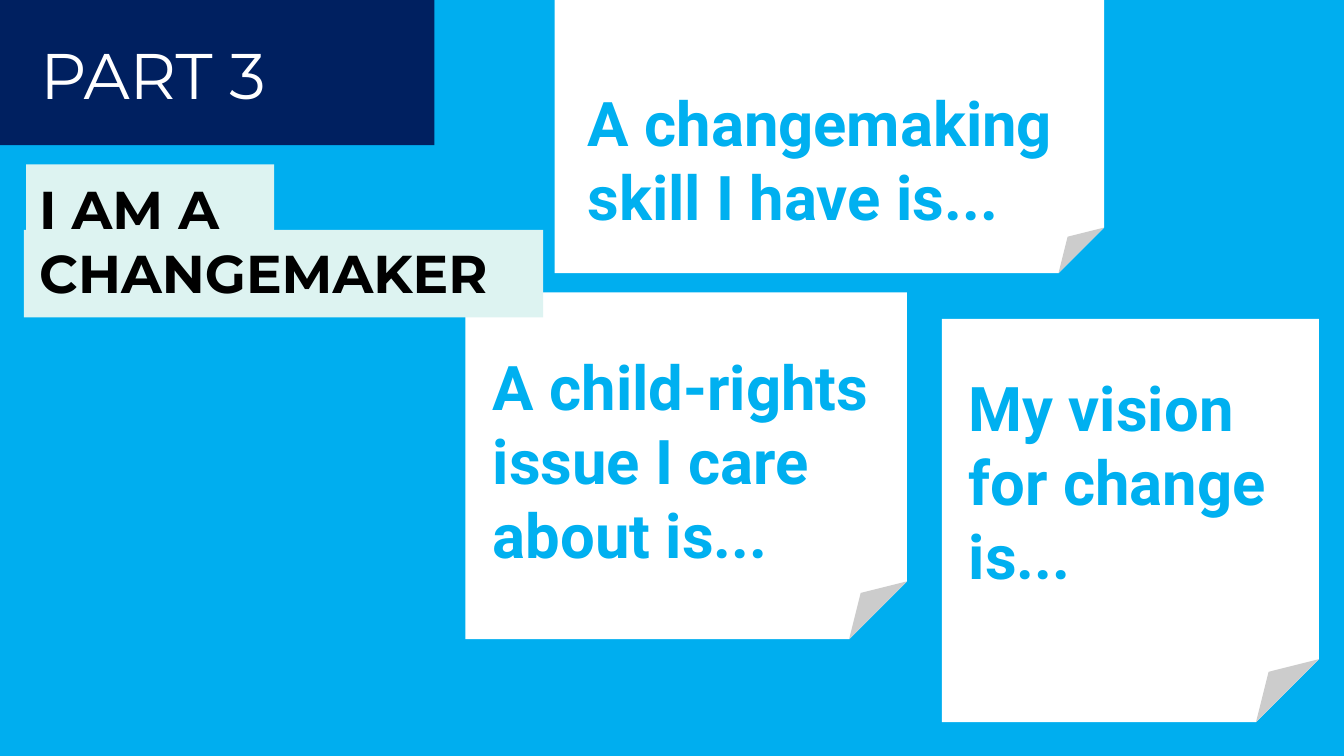
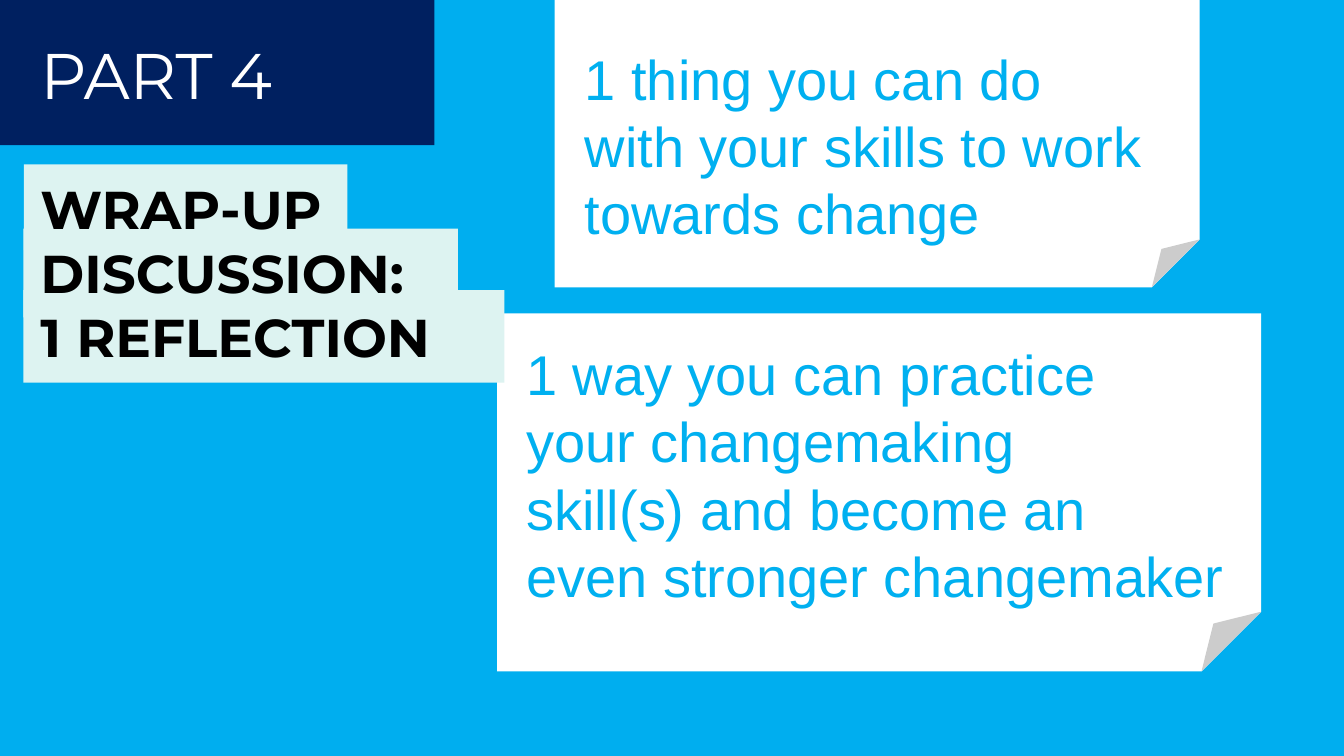
from pptx import Presentation
from pptx import util as u
from pptx.dml.color import RGBColor
from pptx.enum import shapes, text

SKY, NAVY, MINT = "00AEEF", "002060", "DDF3F1"
WHITE, BLACK, NOTE_BLUE = "FFFFFF", "000000", "00B0F0"

PART_STYLE = {"name": "Montserrat", "size": u.Pt(46), "bold": False}
TITLE_STYLE = {"name": "Montserrat", "size": u.Pt(38), "bold": True}
PROMPT_STYLE = {"name": "Roboto", "size": u.Pt(44), "bold": True}
REFLECTION_STYLE = {"name": "Arial", "size": u.Pt(40), "bold": False}

INSET = 8.64
NOTE_LEADING = 1.2
PART_PANEL = (0, 0, 310.3, 103.7)
PART_MARGINS = (28.8, 31, INSET, INSET)

# Boxes are (left, top, width, height) in points.
SLIDES = [
    {
        "part": "PART 3",
        "title": "I AM A\nCHANGEMAKER",
        "title_box": (19.4, 117.4, 419.8, 110.2),
        "title_bars": [(18.7, 117.4, 177.1, 60.5), (17.1, 164.2, 370.8, 62.6)],
        "note_style": PROMPT_STYLE,
        "notes": [
            ("A changemaking skill I have is...",
             (396.2, 0, 392.4, 195.1), (411.1, 51.8, 361.4, 124.6)),
            ("A child-rights\nissue I care\nabout is...",
             (332.4, 208.9, 315.4, 247.6), (343.4, 240.5, 294.5, 182.9)),
            ("My vision\nfor change\nis...",
             (672.8, 227.8, 269.3, 288), (683.3, 255.6, 239, 177.8)),
        ],
    },
    {
        "part": "PART 4",
        "title": "WRAP-UP\nDISCUSSION:\n1 REFLECTION",
        "title_box": (20.2, 117.4, 438.5, 156.2),
        "title_bars": [(17.1, 117.4, 231.1, 61.2), (16.7, 163.4, 310.3, 63.4),
                       (16.7, 207.2, 343.6, 66.2)],
        "note_style": REFLECTION_STYLE,
        "notes": [
            ("1 thing you can do\nwith your skills to work\ntowards change",
             (396.2, 0, 460.8, 205.2), (409, 23, 428.4, 163.4)),
            ("1 way you can practice\nyour changemaking\nskill(s) and become an\n"
             "even stronger changemaker",
             (355, 223.9, 545.8, 255.6), (367.2, 234, 543.6, 212.4)),
        ],
    },
]


def color(hex_code):
    return RGBColor.from_string(hex_code)


def points(values):
    return [u.Pt(value) for value in values]


def add_panel(slide, kind, box, fill):
    panel = slide.shapes.add_shape(kind, *points(box))
    panel.shadow.inherit = False
    panel.fill.solid()
    panel.fill.fore_color.rgb = color(fill)
    panel.line.fill.background()
    return panel


def write(holder, wording, style, ink, spacing, margins=(INSET,) * 4):
    """Fill a shape with one paragraph; newlines become line breaks."""
    frame = holder.text_frame
    left, top, right, bottom = points(margins)
    frame_format = {
        "word_wrap": True, "vertical_anchor": text.MSO_ANCHOR.TOP,
        "margin_left": left, "margin_top": top,
        "margin_right": right, "margin_bottom": bottom,
    }
    for key, value in frame_format.items():
        setattr(frame, key, value)
    paragraph = frame.paragraphs[0]
    paragraph.text = wording
    paragraph.alignment = text.PP_ALIGN.LEFT
    paragraph.line_spacing = spacing
    for run in paragraph.runs:
        for key, value in style.items():
            setattr(run.font, key, value)
        run.font.color.rgb = color(ink)


def build_slide(deck, content):
    slide = deck.slides.add_slide(deck.slide_layouts[6])
    note_style = content["note_style"]
    leading = u.Pt(note_style["size"].pt * NOTE_LEADING)
    for wording, paper_box, wording_box in content["notes"]:
        add_panel(slide, shapes.MSO_SHAPE.FOLDED_CORNER, paper_box, WHITE)
        note = slide.shapes.add_textbox(*points(wording_box))
        write(note, wording, note_style, NOTE_BLUE, leading)

    part = add_panel(slide, shapes.MSO_SHAPE.RECTANGLE, PART_PANEL, NAVY)
    write(part, content["part"], PART_STYLE, WHITE, 0.9, PART_MARGINS)

    for bar_box in content["title_bars"]:
        add_panel(slide, shapes.MSO_SHAPE.RECTANGLE, bar_box, MINT)
    title = slide.shapes.add_textbox(*points(content["title_box"]))
    write(title, content["title"], TITLE_STYLE, BLACK, 1.0)


def main():
    deck = Presentation()
    deck.slide_width, deck.slide_height = points((960, 540))
    backdrop = deck.slide_master.background.fill
    backdrop.solid()
    backdrop.fore_color.rgb = color(SKY)
    for content in SLIDES:
        build_slide(deck, content)
    deck.save("out.pptx")


if __name__ == "__main__":
    main()
